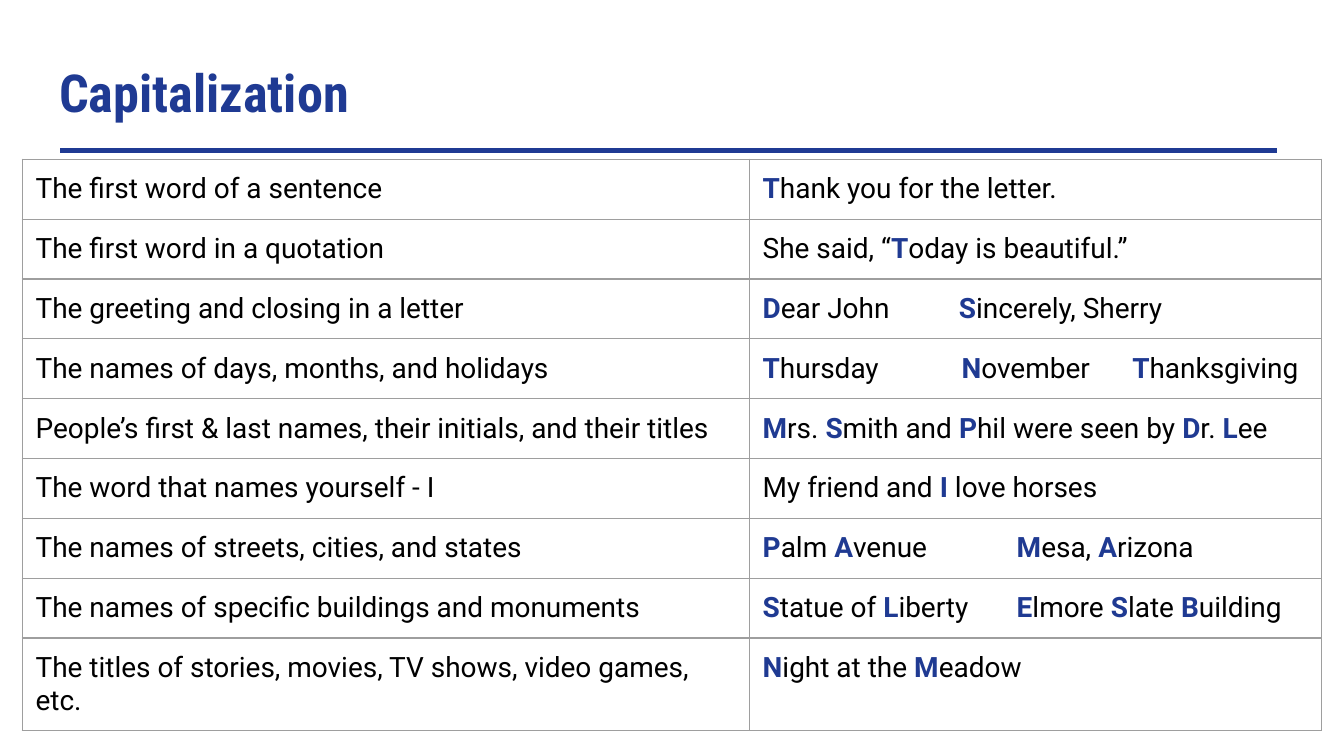
import pptx
import pptx.dml.color
import pptx.enum.shapes
import pptx.enum.text
import pptx.oxml
import pptx.oxml.ns
import pptx.util
from lxml import etree

RGB = pptx.dml.color.RGBColor
BLUE = RGB(0x1F, 0x3A, 0x93)
CAPITAL = RGB(0x1F, 0x3A, 0x92)
BLACK = RGB(0, 0, 0)
GREY = RGB(0x9E, 0x9E, 0x9E)
Pt = pptx.util.Pt
qn = pptx.oxml.ns.qn

TITLE = {"name": "Roboto Condensed", "size": Pt(28), "bold": True, "color": BLUE}
PLAIN = {"name": "Roboto", "size": Pt(15), "bold": False, "color": BLACK}
STRONG = {**PLAIN, "bold": True, "color": CAPITAL}

# Asterisks enclose the highlighted capitals; the third item lists tab stops.
RULES = [
    ("The first word of a sentence", "*T*hank you for the letter.", ()),
    ("The first word in a quotation", "She said, “*T*oday is beautiful.”", ()),
    ("The greeting and closing in a letter",
     "*D*ear John\t*S*incerely, Sherry", (14.6,)),
    ("The names of days, months, and holidays",
     "*T*hursday\t*N*ovember\t*T*hanksgiving", (14.8, 27.5)),
    ("People’s first & last names, their initials, and their titles",
     "*M*rs. *S*mith and *P*hil were seen by *D*r. *L*ee", ()),
    ("The word that names yourself - I", "My friend and *I* love horses", ()),
    ("The names of streets, cities, and states",
     "*P*alm *A*venue\t*M*esa, *A*rizona", (18.9,)),
    ("The names of specific buildings and monuments",
     "*S*tatue of *L*iberty\t*E*lmore *S*late *B*uilding", (18.9,)),
    ("The titles of stories, movies, TV shows, video games, etc.",
     "*N*ight at the *M*eadow", ()),
]


class SlideBuilder:
    """Places elements on a square grid, 100 columns across the slide."""

    def __init__(self, prs):
        self.unit = prs.slide_width / 100
        self.s = prs.slides.add_slide(prs.slide_layouts[5])

    def grid(self, *cells):
        return [pptx.util.Emu(round(c * self.unit)) for c in cells]

    def set_margins(self, obj):
        for side in ("left", "right", "top", "bottom"):
            setattr(obj, "margin_" + side, self.grid(1)[0])

    def add_run(self, p, text, style):
        r = p.add_run()
        r.text = text
        for name, value in style.items():
            if name == "color":
                r.font.color.rgb = value
            else:
                setattr(r.font, name, value)

    def add_title(self, text, *box):
        sp = self.s.shapes.title
        sp.left, sp.top, sp.width, sp.height = self.grid(*box)
        tf = sp.text_frame
        self.set_margins(tf)
        tf.auto_size = pptx.enum.text.MSO_AUTO_SIZE.NONE
        tf.vertical_anchor = pptx.enum.text.MSO_ANCHOR.TOP
        p = tf.paragraphs[0]
        p.alignment = pptx.enum.text.PP_ALIGN.LEFT
        self.add_run(p, text, TITLE)

    def add_rule(self, *ends):
        line = self.s.shapes.add_connector(
            pptx.enum.shapes.MSO_CONNECTOR.STRAIGHT, *self.grid(*ends))
        line.line.color.rgb = BLUE
        line.line.width = Pt(2.25)
        etree.SubElement(line._element.spPr, qn("a:effectLst"))

    def add_table(self, rows, left, top, widths, row_height):
        box = self.grid(left, top, sum(widths), row_height * len(rows))
        table = self.s.shapes.add_table(len(rows), len(widths), *box).table
        table.first_row = table.horz_banding = False
        for column, width in zip(table.columns, self.grid(*widths)):
            column.width = width
        for i, (rule, example, stops) in enumerate(rows):
            self.fill_cell(table.cell(i, 0), rule)
            self.fill_cell(table.cell(i, 1), example, stops)

    def fill_cell(self, cell, text, stops=()):
        self.set_margins(cell)
        self.add_borders(cell)
        cell.fill.background()
        p = cell.text_frame.paragraphs[0]
        if stops:
            tabs = etree.SubElement(p._p.get_or_add_pPr(), qn("a:tabLst"))
            for pos in self.grid(*stops):
                etree.SubElement(tabs, qn("a:tab"), pos=str(int(pos)), algn="l")
        for i, part in enumerate(text.split("*")):
            if part:
                self.add_run(p, part, STRONG if i % 2 else PLAIN)

    def add_borders(self, cell):
        tc_pr = cell._tc.get_or_add_tcPr()
        for side in ("a:lnL", "a:lnR", "a:lnT", "a:lnB"):
            ln = etree.SubElement(tc_pr, qn(side), w=str(int(Pt(0.75))))
            fill = etree.SubElement(ln, qn("a:solidFill"))
            etree.SubElement(fill, qn("a:srgbClr"), val=str(GREY))


def main():
    prs = pptx.Presentation()
    prs.slide_width = pptx.util.Inches(10)
    prs.slide_height = pptx.util.Inches(5.625)
    slide = SlideBuilder(prs)
    slide.add_title("Capitalization", 3.4, 3.5, 93.2, 6.3)
    slide.add_rule(4.5, 11.2, 95, 11.2)
    slide.add_table(RULES, 1.65, 11.85, (54.1, 42.6), 4.3)
    prs.save("out.pptx")


if __name__ == "__main__":
    main()
